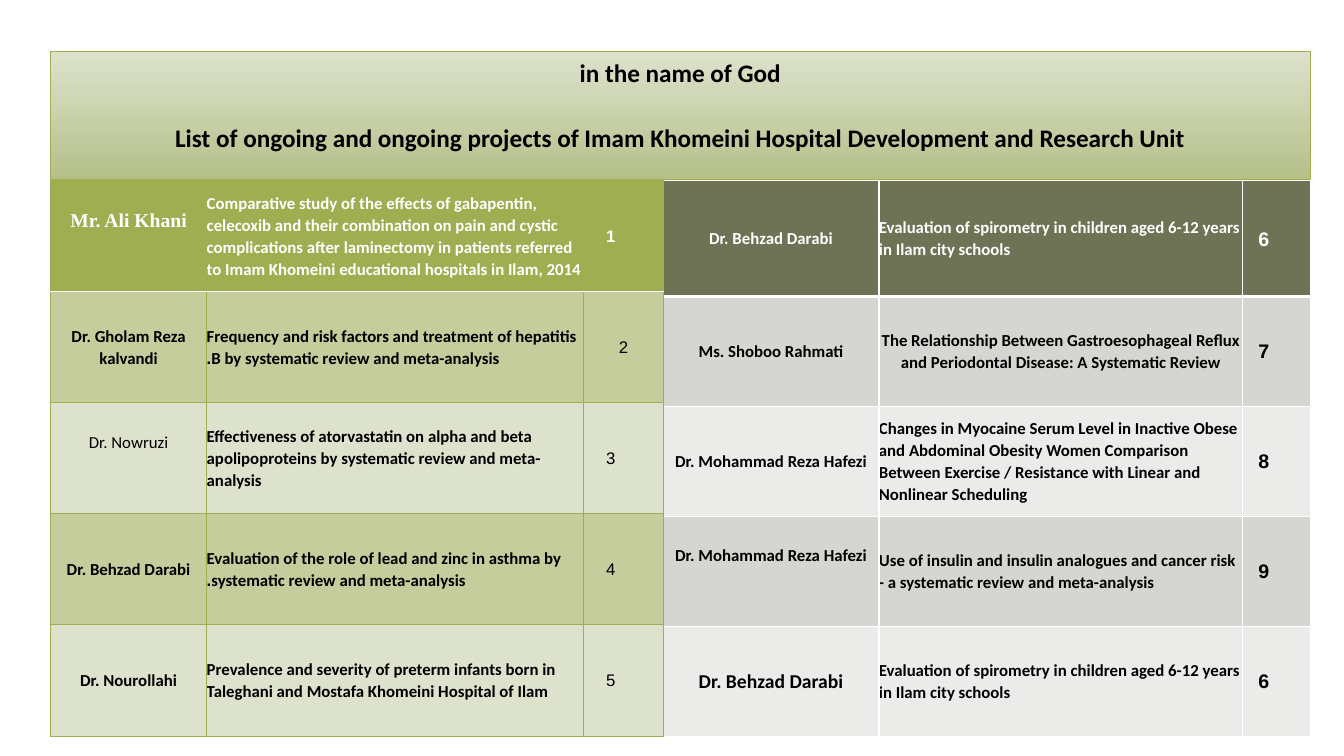
from lxml.etree import SubElement
from pptx import Presentation
from pptx.dml.color import RGBColor
from pptx.enum.text import MSO_ANCHOR, PP_ALIGN
from pptx.oxml.ns import qn
from pptx.util import Cm, Pt

LEFT, CENTER = PP_ALIGN.LEFT, PP_ALIGN.CENTER
TOP, MIDDLE = MSO_ANCHOR.TOP, MSO_ANCHOR.MIDDLE
GREEN, WHITE, BLACK = "9EAE51", "FFFFFF", "000000"
TIMES = "Times New Roman"
RAISE = Cm(0.81)

TITLE = ["in the name of God",
         "List of ongoing and ongoing projects of Imam Khomeini Hospital Development and Research Unit"]
SPIRO = "Evaluation of spirometry in children aged 6-12 years in Ilam city schools"
FIRST = [
    ("Mr. Ali Khani",
     "Comparative study of the effects of gabapentin, celecoxib and their combination on pain and cystic "
     "complications after laminectomy in patients referred to Imam Khomeini educational hospitals in Ilam, 2014",
     "1"),
    ("Dr. Gholam Reza kalvandi",
     "Frequency and risk factors and treatment of hepatitis B by systematic review and meta-analysis.", "2"),
    ("Dr. Nowruzi",
     "Effectiveness of atorvastatin on alpha and beta apolipoproteins by systematic review and meta-analysis", "3"),
    ("Dr. Behzad Darabi",
     "Evaluation of the role of lead and zinc in asthma by systematic review and meta-analysis.", "4"),
    ("Dr. Nourollahi",
     "Prevalence and severity of preterm infants born in Taleghani and Mostafa Khomeini Hospital of Ilam", "5"),
]
SECOND = [
    ("Dr. Behzad Darabi", SPIRO, "6"),
    ("Ms. Shoboo Rahmati",
     "The Relationship Between Gastroesophageal Reflux and Periodontal Disease: A Systematic Review", "7"),
    ("Dr. Mohammad Reza Hafezi",
     "Changes in Myocaine Serum Level in Inactive Obese and Abdominal Obesity Women Comparison "
     "Between Exercise / Resistance with Linear and Nonlinear Scheduling", "8"),
    ("Dr. Mohammad Reza Hafezi",
     "Use of insulin and insulin analogues and cancer risk - a systematic review and meta-analysis", "9"),
    ("Dr. Behzad Darabi", SPIRO, "6"),
]
FIRST_LOOK = {
    (0, 0): dict(size=14, face=TIMES, lift=RAISE),
    (0, 2): dict(bold=True),
    (1, 2): dict(inset=0),
    (2, 0): dict(bold=False, lift=RAISE),
}
SECOND_LOOK = {
    (1, 1): dict(align=CENTER),
    (3, 0): dict(lift=RAISE),
    (4, 0): dict(size=14),
}


def paint(code):
    """Turn a hex string into a colour."""
    return RGBColor.from_string(code)


def style(para, color, size=12, face="Calibri", bold=True, align=CENTER, inset=0):
    """Format a right-to-left paragraph."""
    props = para._p.get_or_add_pPr()
    props.set("rtl", "1")
    props.set("marL", str(inset))
    props.set("indent", "0")
    para.alignment = align
    para.line_spacing = 1.07
    para.space_after = Pt(8)
    font = para.font
    font.size, font.bold, font.name = Pt(size), bold, face
    font.color.rgb = paint(color)
    SubElement(props.find(qn("a:defRPr")), qn("a:cs"), typeface="Arial")


def edge(cell, side, color, width):
    """Draw one border of a cell."""
    line = SubElement(cell._tc.get_or_add_tcPr(), qn("a:ln" + side), w=str(Pt(width)))
    fill = SubElement(line, qn("a:solidFill"))
    SubElement(fill, qn("a:srgbClr"), val=color)


def head(slide, x, y, w, h):
    """Place the title band."""
    band = slide.shapes.title
    band.left, band.top, band.width, band.height = x, y, w, h
    band.fill.gradient()
    band.fill.gradient_angle = 270
    for stop, code in zip(band.fill.gradient_stops, ("DDE2CC", "B5C089")):
        stop.color.rgb = paint(code)
    band.line.color.rgb = paint(GREEN)
    band.line.width = Pt(0.75)
    frame = band.text_frame
    frame.word_wrap = True
    frame.vertical_anchor = TOP
    frame.margin_top = Cm(0.08)
    frame.text = "\n".join(TITLE)
    for para in frame.paragraphs:
        style(para, BLACK, size=18)
        para.space_after = Pt(23.5)


def grid(slide, x, y, cols, rows, data, fills, rule, divide, number, looks):
    """Place a table of projects with its rules and fills."""
    shape = slide.shapes.add_table(len(rows), len(cols), x, y, sum(cols), sum(rows))
    table = shape.table
    table.first_row = table.horz_banding = False
    for col, width in zip(table.columns, cols):
        col.width = width
    for row, height in zip(table.rows, rows):
        row.height = height
    color, width = rule
    kinds = ({}, dict(align=LEFT), number)
    for r, texts in enumerate(data):
        for c, text in enumerate(texts):
            cell = table.cell(r, c)
            look = {**kinds[c], **looks.get((r, c), {})}
            cell.margin_left = cell.margin_right = cell.margin_top = 0
            cell.margin_bottom = look.pop("lift", 0)
            cell.vertical_anchor = MIDDLE
            cell.text = text
            style(cell.text_frame.paragraphs[0], BLACK if r else WHITE, **look)
            edge(cell, "L", color, width)
            edge(cell, "R", color, width)
            edge(cell, "T", *(divide if r == 1 else rule))
            edge(cell, "B", *(rule if r else divide))
            cell.fill.solid()
            cell.fill.fore_color.rgb = paint(fills[0] if r == 0 else fills[2 - r % 2])


def main():
    """Build the slide and save it."""
    deck = Presentation()
    deck.slide_width, deck.slide_height = Cm(33.87), Cm(19.05)
    slide = deck.slides.add_slide(deck.slide_layouts[5])
    x, y = Cm(1.27), Cm(4.55)
    head(slide, x, Cm(1.3), Cm(31.75), Cm(3.23))
    inset = Cm(0.64)
    grid(slide, Cm(16.71), y, [Cm(5.44), Cm(9.17), Cm(1.7)], [Cm(2.92)] + [Cm(2.77)] * 4,
         SECOND, ("6E7355", "D5D5D1", "EBEBE9"), (WHITE, 1), (WHITE, 3),
         dict(size=14, inset=inset), SECOND_LOOK)
    grid(slide, x, y, [Cm(3.94), Cm(9.5), Cm(2.01)], [Cm(2.8)] * 5,
         FIRST, (GREEN, "C4CD9B", "DDE2CC"), (GREEN, 0.75), (WHITE, 1.25),
         dict(face=TIMES, bold=False, inset=inset), FIRST_LOOK)
    deck.save("out.pptx")


if __name__ == "__main__":
    main()
